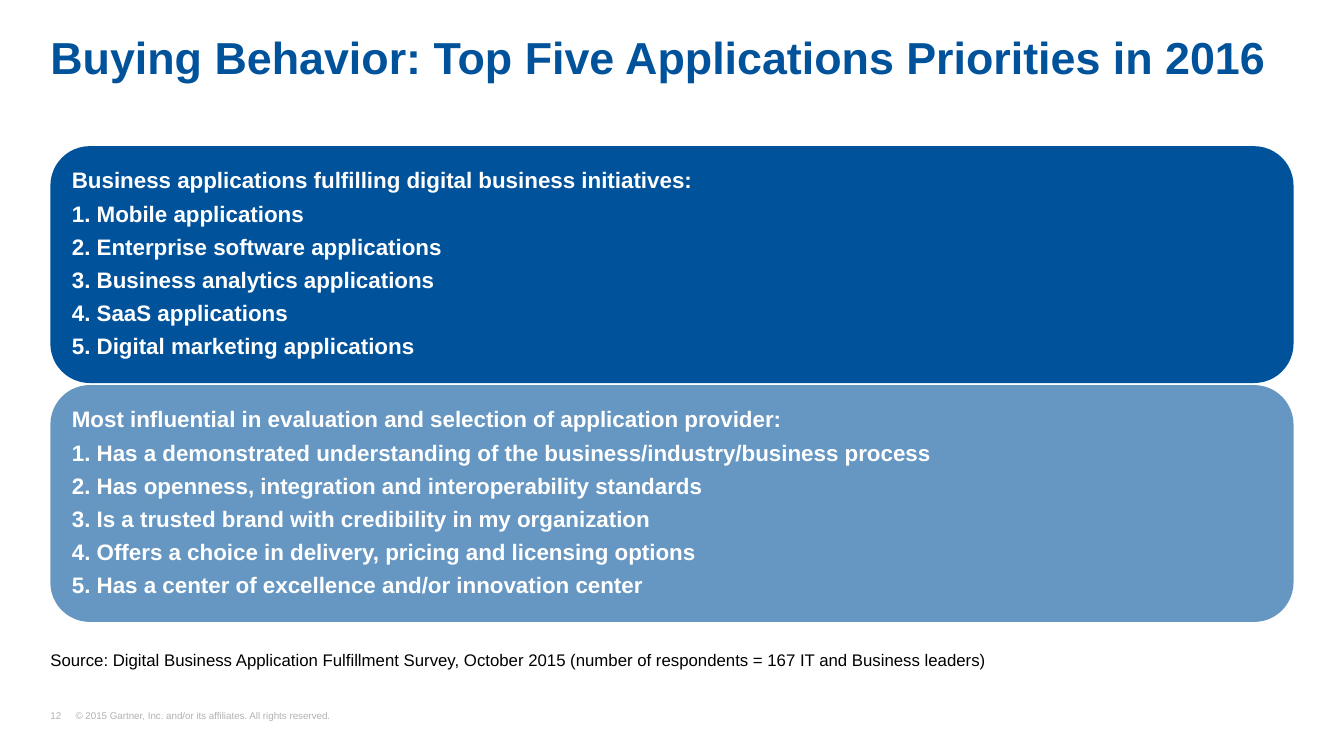
import pptx
import pptx.util
import pptx.dml.color
import pptx.enum.shapes
import pptx.enum.text
import pptx.oxml
import pptx.oxml.ns
from pptx.util import Inches

THEME = {
    "font": "Arial",
    "navy": "00529B", "sky": "6697C3", "white": "FFFFFF",
    "black": "000000", "grey": "B2B2B2",
    "title": 32, "body": 16, "source": 12, "footer": 7,
}
ANCHOR = pptx.enum.text.MSO_ANCHOR


def set_frame(tf, anchor, insets, wrap=True):
    tf.word_wrap = wrap
    tf.vertical_anchor = anchor
    tf.margin_left, tf.margin_top, tf.margin_right, tf.margin_bottom = map(Inches, insets)


def add_text(p, text, size, color, bold=False, after=0):
    p.alignment = pptx.enum.text.PP_ALIGN.LEFT
    p.line_spacing = 0.9
    p.space_after = pptx.util.Pt(after)
    r = p.add_run()
    r.text = text
    r.font.name = THEME["font"]
    r.font.size = pptx.util.Pt(THEME[size])
    r.font.bold = bold
    r.font.color.rgb = pptx.dml.color.RGBColor.from_string(THEME[color])


prs = pptx.Presentation()
prs.slide_width, prs.slide_height = Inches(13.33), Inches(7.5)
s = prs.slides.add_slide(prs.slide_layouts[6])
left, width = Inches(0.5), Inches(12.33)

title = s.shapes.add_textbox(left, Inches(0.25), width, Inches(0.59))
set_frame(title.text_frame, ANCHOR.TOP, (0, 0.1, 0, 0))
add_text(title.text_frame.paragraphs[0],
         "Buying Behavior: Top Five Applications Priorities in 2016",
         "title", "navy", bold=True)

panels = [
    ("navy", "Business applications fulfilling digital business initiatives:", [
        "Mobile applications",
        "Enterprise software applications",
        "Business analytics applications",
        "SaaS applications",
        "Digital marketing applications",
    ]),
    ("sky", "Most influential in evaluation and selection of application provider:", [
        "Has a demonstrated understanding of the business/industry/business process",
        "Has openness, integration and interoperability standards",
        "Is a trusted brand with credibility in my organization",
        "Offers a choice in delivery, pricing and licensing options",
        "Has a center of excellence and/or innovation center",
    ]),
]
panel_top, panel_height, panel_pitch = 1.45, 2.35, 2.37
for i, (fill, heading, priorities) in enumerate(panels):
    sp = s.shapes.add_shape(
        pptx.enum.shapes.MSO_SHAPE.ROUNDED_RECTANGLE,
        left, Inches(panel_top + i * panel_pitch), width, Inches(panel_height))
    sp.shadow.inherit = False
    sp.fill.solid()
    sp.fill.fore_color.rgb = pptx.dml.color.RGBColor.from_string(THEME[fill])
    sp.line.fill.background()
    tf = sp.text_frame
    set_frame(tf, ANCHOR.MIDDLE, (0.1, 0.1, 0.1, 0.1))
    lines = [heading] + [f"{n}. {text}" for n, text in enumerate(priorities, 1)]
    for n, line in enumerate(lines):
        p = tf.add_paragraph() if n else tf.paragraphs[0]
        add_text(p, line, "body", "white", bold=True, after=6.4)

source = s.shapes.add_textbox(left, Inches(6.42), Inches(9.4), Inches(0.28))
set_frame(source.text_frame, ANCHOR.TOP, (0, 0.05, 0, 0.05), wrap=False)
add_text(source.text_frame.paragraphs[0],
         "Source: Digital Business Application Fulfillment Survey, October 2015 "
         "(number of respondents = 167 IT and Business leaders)",
         "source", "black")

footer = s.shapes.add_textbox(left, Inches(7.05), Inches(3.35), Inches(0.11))
set_frame(footer.text_frame, ANCHOR.BOTTOM, (0, 0, 0, 0))
p = footer.text_frame.paragraphs[0]
add_text(p, "12\t© 2015 Gartner, Inc. and/or its affiliates. All rights reserved.",
         "footer", "grey")
tabs = pptx.oxml.parse_xml(
    f'<a:tabLst {pptx.oxml.ns.nsdecls("a")}>'
    f'<a:tab pos="{Inches(0.25)}" algn="l"/></a:tabLst>')
p._p.get_or_add_pPr().append(tabs)

prs.save("out.pptx")
